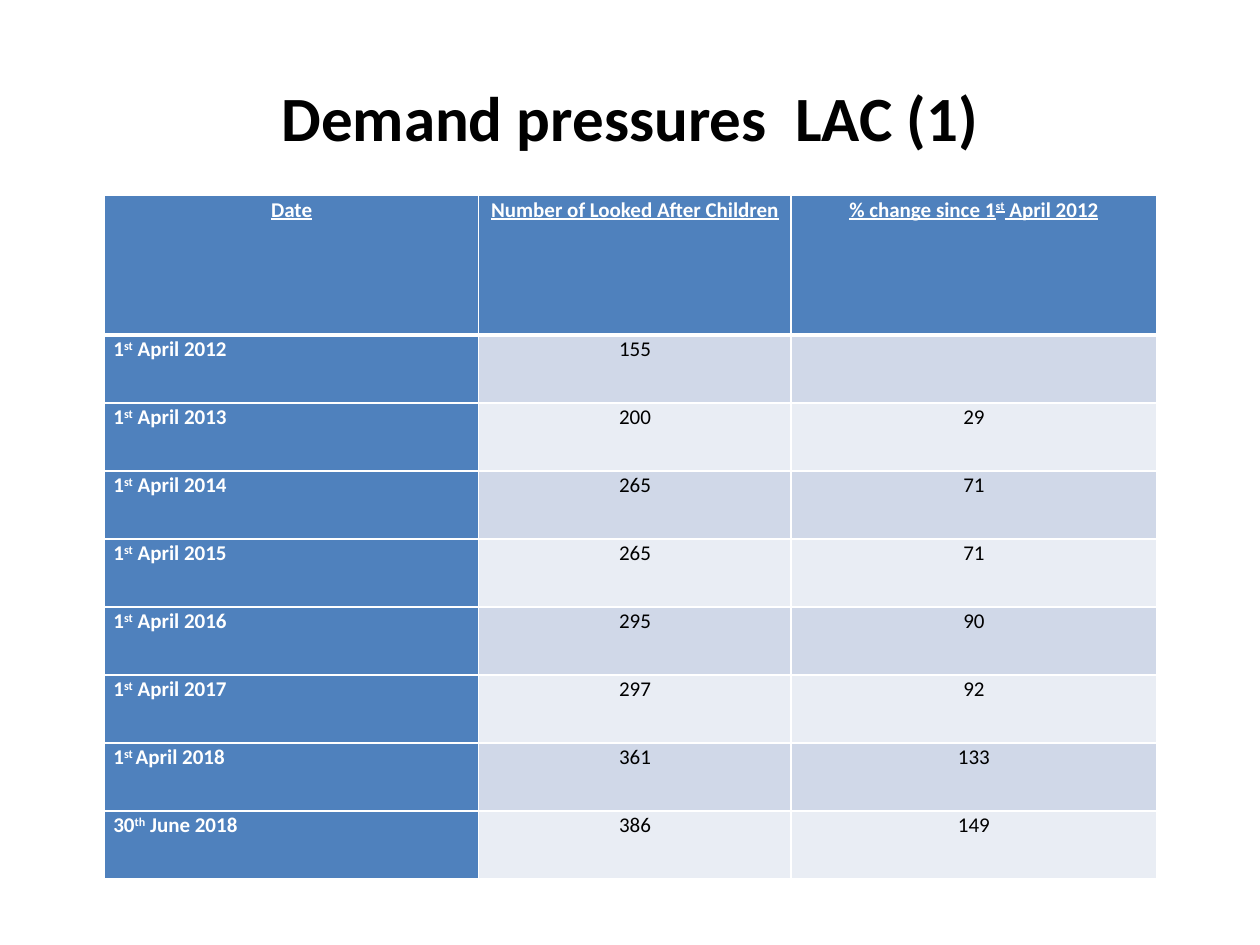
import pptx
import pptx.dml.color
import pptx.enum.text
import pptx.oxml.ns
import pptx.util
from lxml import etree

Inches = pptx.util.Inches
ALIGN = pptx.enum.text.PP_ALIGN
ANCHOR = pptx.enum.text.MSO_ANCHOR

FONT = "Calibri"
WHITE, BLACK, BLUE = "FFFFFF", "000000", "4F81BD"
BANDS = ("D0D8E8", "E9EDF4")
COLUMN_WIDTHS = (2.97, 2.48, 2.9)
HEADER_HEIGHT, ROW_HEIGHT = 1.11, 0.54

# Each cell is a list of runs; every second run is superscript.
HEADERS = (
    ["Date"],
    ["Number of Looked After Children"],
    ["% change since 1", "st", " April 2012"],
)
ROWS = (
    (["1", "st", " April 2012"], "155", ""),
    (["1", "st", " April 2013"], "200", "29"),
    (["1", "st", " April 2014"], "265", "71"),
    (["1", "st", " April 2015"], "265", "71"),
    (["1", "st", " April 2016"], "295", "90"),
    (["1", "st", " April 2017"], "297", "92"),
    (["1", "st ", "April 2018"], "361", "133"),
    (["30", "th", " June 2018"], "386", "149"),
)


def rgb(color):
    return pptx.dml.color.RGBColor.from_string(color)


def add_run(p, text, size, color, bold=False, underline=False, superscript=False):
    r = p.add_run()
    r.text = text
    r.font.name = FONT
    r.font.size = pptx.util.Pt(size)
    r.font.color.rgb = rgb(color)
    r.font.bold = bold
    r.font.underline = underline
    if superscript:
        r.font._element.set("baseline", "30000")


def add_title(s, text):
    sp = s.shapes.add_textbox(Inches(0.5), Inches(0.3), Inches(9), Inches(1.25))
    tf = sp.text_frame
    tf.word_wrap = True
    tf.vertical_anchor = ANCHOR.MIDDLE
    p = tf.paragraphs[0]
    p.alignment = ALIGN.CENTER
    add_run(p, text, 36, BLACK, bold=True)


def set_borders(cell, bottom=1):
    """Draw white cell borders, placed before the fill as the schema requires."""
    tc_pr = cell._tc.get_or_add_tcPr()
    qn = pptx.oxml.ns.qn
    widths = {"a:lnL": 1, "a:lnR": 1, "a:lnT": 1, "a:lnB": bottom}
    for i, (tag, width) in enumerate(widths.items()):
        ln = etree.Element(qn(tag), w=str(pptx.util.Pt(width)))
        fill = etree.SubElement(ln, qn("a:solidFill"))
        etree.SubElement(fill, qn("a:srgbClr"), val=WHITE)
        tc_pr.insert(i, ln)


def fill_cell(cell, runs, fill, color, align=ALIGN.CENTER, bottom=1, **style):
    cell.fill.solid()
    cell.fill.fore_color.rgb = rgb(fill)
    set_borders(cell, bottom)
    cell.margin_left = cell.margin_right = Inches(0.07)
    cell.margin_top = cell.margin_bottom = 0
    p = cell.text_frame.paragraphs[0]
    p.alignment = align
    p.line_spacing = 1.07
    for i, text in enumerate(runs):
        add_run(p, text, 12, color, superscript=i % 2 == 1, **style)


def add_children_table(s):
    height = HEADER_HEIGHT + ROW_HEIGHT * len(ROWS)
    frame = s.shapes.add_table(
        len(ROWS) + 1, len(COLUMN_WIDTHS), Inches(0.83), Inches(1.55),
        Inches(sum(COLUMN_WIDTHS)), Inches(height))
    table = frame.table
    table.first_col = True
    for column, width in zip(table.columns, COLUMN_WIDTHS):
        column.width = Inches(width)
    for row in table.rows:
        row.height = Inches(ROW_HEIGHT)
    table.rows[0].height = Inches(HEADER_HEIGHT)

    for c, runs in enumerate(HEADERS):
        fill_cell(table.cell(0, c), runs, BLUE, WHITE, bottom=3,
                  bold=True, underline=True)
    for r, (date, *values) in enumerate(ROWS, 1):
        fill_cell(table.cell(r, 0), date, BLUE, WHITE, ALIGN.LEFT, bold=True)
        for c, value in enumerate(values, 1):
            fill_cell(table.cell(r, c), [value] if value else [],
                      BANDS[(r - 1) % 2], BLACK)
    for c in range(len(COLUMN_WIDTHS)):
        top = table.cell(1, c)._tc.tcPr.find(pptx.oxml.ns.qn("a:lnT"))
        top.set("w", str(pptx.util.Pt(3)))


def main():
    prs = pptx.Presentation()
    prs.slide_width, prs.slide_height = Inches(10), Inches(7.5)
    s = prs.slides.add_slide(prs.slide_layouts[6])
    add_title(s, "Demand pressures  LAC (1)")
    add_children_table(s)
    prs.save("out.pptx")


if __name__ == "__main__":
    main()
